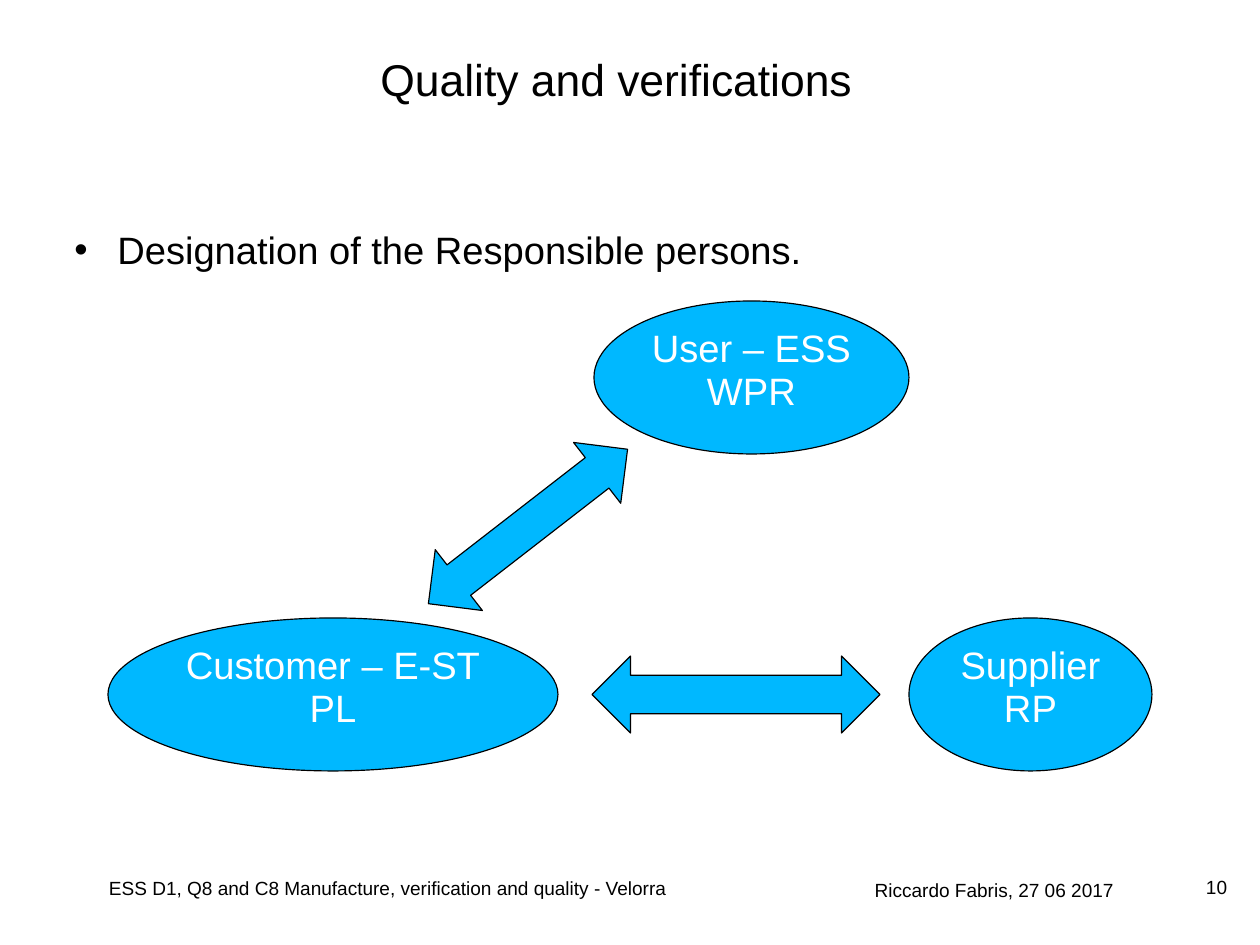
from dataclasses import dataclass

import lxml.etree
import pptx
import pptx.dml.color
import pptx.enum.shapes
import pptx.enum.text
import pptx.oxml.ns
import pptx.util

ALIGN = pptx.enum.text.PP_ALIGN
ANCHOR = pptx.enum.text.MSO_ANCHOR
SHAPE = pptx.enum.shapes.MSO_SHAPE
PX = 8000  # EMU per px


@dataclass(frozen=True)
class Theme:
    font: str = "Arial"
    ink: str = "000000"
    accent: str = "00B8FF"
    on_accent: str = "FFFFFF"
    title_size: int = 28
    body_size: int = 24
    footer_size: int = 12
    outline: float = 0.75
    line_spacing: float = 0.93


theme = Theme()


def rgb(code):
    return pptx.dml.color.RGBColor.from_string(code)


def write(frame, text, size, color, align=ALIGN.LEFT, spacing=theme.line_spacing):
    """Fill a text frame, one paragraph per line of text."""
    frame.text = text
    frame.word_wrap = True
    frame.auto_size = pptx.enum.text.MSO_AUTO_SIZE.NONE
    for paragraph in frame.paragraphs:
        paragraph.alignment = align
        paragraph.line_spacing = spacing
        paragraph.space_before = pptx.util.Pt(0)
        paragraph.font.name = theme.font
        paragraph.font.size = pptx.util.Pt(size)
        paragraph.font.color.rgb = rgb(color)


deck = pptx.Presentation()
deck.slide_width, deck.slide_height = 1260 * PX, 945 * PX
slide = deck.slides.add_slide(deck.slide_layouts[1])

# Title and checklist
title = slide.shapes.title
title.left, title.top, title.width, title.height = [v * PX for v in (369, 23, 837, 117)]
write(title.text_frame, "Quality and verifications", theme.title_size, theme.ink)
title.text_frame.vertical_anchor = ANCHOR.MIDDLE

checklist = slide.placeholders[1]
checklist.left, checklist.top, checklist.width, checklist.height = [
    v * PX for v in (63, 221, 1134, 624)]
frame = checklist.text_frame
frame.text = "Designation of the Responsible persons."
properties = frame.paragraphs[0]._p.get_or_add_pPr()
properties.set("marL", str(43 * PX))
properties.set("indent", str(-43 * PX))
bullet_color = lxml.etree.SubElement(properties, pptx.oxml.ns.qn("a:buClr"))
lxml.etree.SubElement(bullet_color, pptx.oxml.ns.qn("a:srgbClr"), val=theme.ink)
lxml.etree.SubElement(properties, pptx.oxml.ns.qn("a:buChar"), char="✓")
write(frame, frame.text, theme.body_size, theme.ink, spacing=1.0)
frame.paragraphs[0].space_after = pptx.util.Pt(6)

# Responsible parties and the links between them
diagram = [
    (SHAPE.OVAL, (594, 301, 315, 153), 0, "User – ESS\nWPR"),
    (SHAPE.OVAL, (108, 618, 450, 153), 0, "Customer – E-ST\nPL"),
    (SHAPE.OVAL, (909, 618, 243, 153), 0, "Supplier\nRP"),
    (SHAPE.LEFT_RIGHT_ARROW, (402, 488, 252, 77), 322.2, ""),
    (SHAPE.LEFT_RIGHT_ARROW, (592, 656, 288, 77), 0, ""),
]
for kind, box, angle, label in diagram:
    part = slide.shapes.add_shape(kind, *[v * PX for v in box])
    part.rotation = angle
    part.shadow.inherit = False
    part.fill.solid()
    part.fill.fore_color.rgb = rgb(theme.accent)
    part.line.color.rgb = rgb(theme.ink)
    part.line.width = pptx.util.Pt(theme.outline)
    if label:
        write(part.text_frame, label, theme.body_size, theme.on_accent, ALIGN.CENTER)
        part.text_frame.vertical_anchor = ANCHOR.TOP

# Footer: box, horizontal inset, top inset, alignment, text
footers = [
    ((98, 872, 612, 45), 11, 7, ALIGN.LEFT,
     "ESS D1, Q8 and C8 Manufacture, verification and quality - Velorra"),
    ((711, 873, 414, 39), 11, 7, ALIGN.RIGHT, "Riccardo Fabris, 27 06 2017"),
    ((1206, 878, 37, 29), 0, 0, ALIGN.LEFT, "10"),
]
for box, side_inset, top_inset, align, text in footers:
    footer = slide.shapes.add_textbox(*[v * PX for v in box]).text_frame
    footer.margin_left = footer.margin_right = side_inset * PX
    footer.margin_top = footer.margin_bottom = top_inset * PX
    write(footer, text, theme.footer_size, theme.ink, align)

deck.save("out.pptx")
